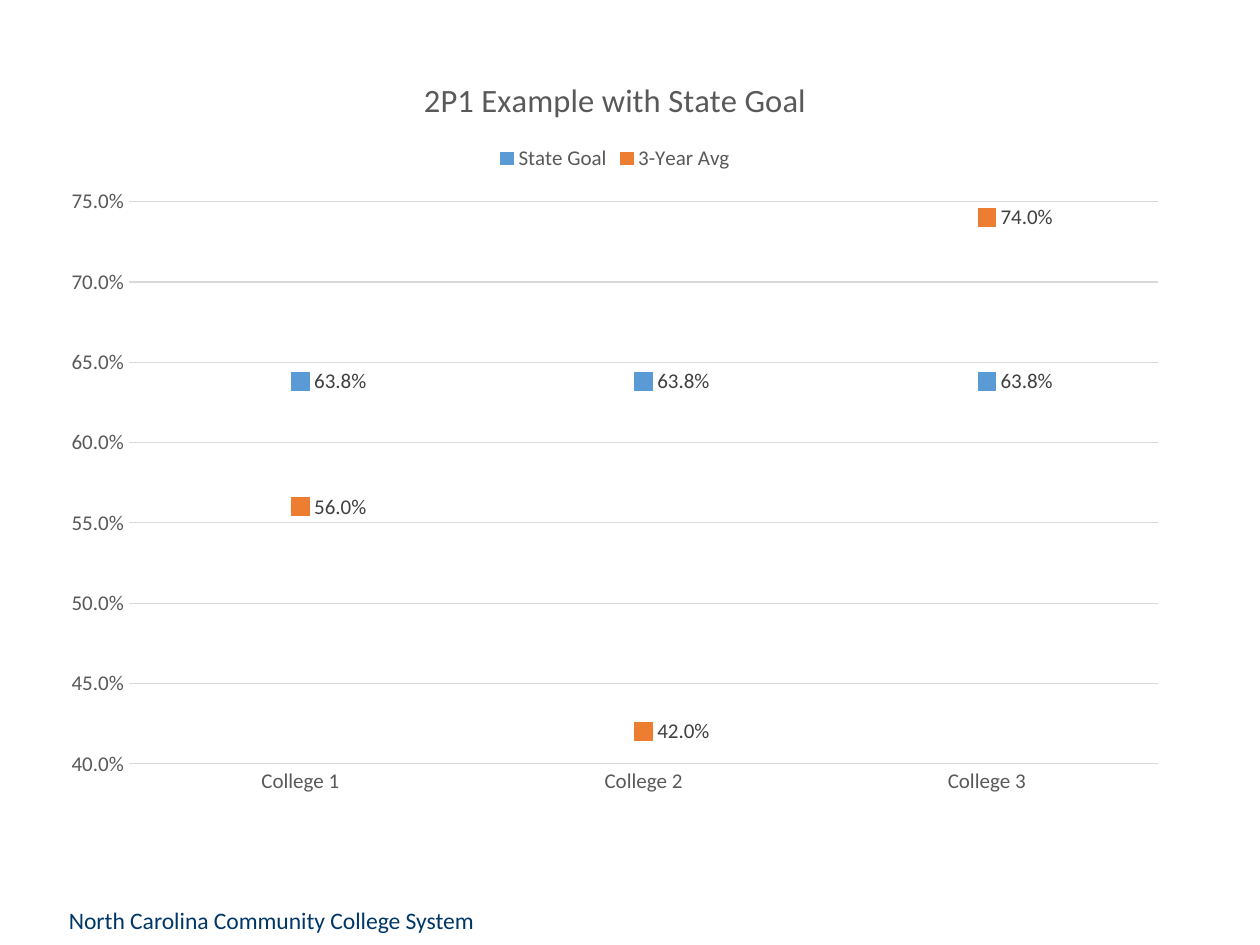
from typing import Any, NamedTuple

from lxml.etree import SubElement
from pptx import Presentation
from pptx.chart.data import CategoryChartData
from pptx.dml.color import RGBColor
from pptx.enum.chart import (XL_CHART_TYPE, XL_LABEL_POSITION,
                             XL_LEGEND_POSITION, XL_MARKER_STYLE, XL_TICK_MARK)
from pptx.enum.text import MSO_ANCHOR
from pptx.oxml.ns import qn
from pptx.util import Cm, Pt


class Score(NamedTuple):
    """One marker series of the chart."""
    name: str
    vals: tuple[float, ...]
    tint: str


SCORES = (
    Score("State Goal", (0.638, 0.638, 0.638), "5B9BD5"),
    Score("3-Year Avg", (0.56, 0.42, 0.74), "ED7D31"),
)
GREY, RULE, DARK, NAVY = "595959", "D9D9D9", "404040", "003767"
PERCENT = "0.0%"
PLOT = {"x": 0.07, "y": 0.2, "w": 0.91, "h": 0.74}


def paint(part: Any, tint: str) -> None:
    """Give a font or a fill a solid colour."""
    if hasattr(part, "solid"):
        part.solid()
        part.fore_color.rgb = RGBColor.from_string(tint)
    else:
        part.color.rgb = RGBColor.from_string(tint)


def assign(part: Any, form: dict[str, Any]) -> None:
    """Set each named attribute of a part."""
    for key, val in form.items():
        setattr(part, key, val)


def style(font: Any, size: float, tint: str) -> None:
    """Set face, size, weight and colour of a font."""
    assign(font, {"name": "Calibri", "size": Pt(size), "bold": False})
    paint(font, tint)


def rule(line: Any) -> None:
    """Draw a thin pale line."""
    line.width = Pt(0.75)
    paint(line.fill, RULE)


def place(chart: Any) -> None:
    """Fix the inner plot area as shares of the chart."""
    area = chart._chartSpace.chart.plotArea
    for old in area.findall(qn("c:layout")):
        area.remove(old)
    frame = area.makeelement(qn("c:layout"), {})
    area.insert(0, frame)
    manual = SubElement(frame, qn("c:manualLayout"))
    modes = {"layoutTarget": "inner", "xMode": "edge", "yMode": "edge"}
    for key, val in {**modes, **PLOT}.items():
        SubElement(manual, qn(f"c:{key}")).set("val", str(val))


def mark(line: Any, score: Score) -> None:
    """Show a series as square markers with labels and no line."""
    line.smooth = False
    line.format.line.fill.background()
    assign(line.marker, {"style": XL_MARKER_STYLE.SQUARE, "size": 10})
    paint(line.marker.format.fill, score.tint)
    paint(line.marker.format.line.fill, score.tint)
    tags = line.data_labels
    assign(tags, {"show_value": True, "number_format": PERCENT,
                  "number_format_is_linked": False,
                  "position": XL_LABEL_POSITION.RIGHT})
    style(tags.font, 12, DARK)


def draw(slide: Any) -> None:
    """Add the chart of scores by college."""
    data = CategoryChartData(number_format=PERCENT)
    data.categories = [f"College {num}" for num in range(1, 4)]
    for score in SCORES:
        data.add_series(score.name, score.vals)
    chart = slide.shapes.add_chart(XL_CHART_TYPE.LINE_MARKERS, Cm(1), Cm(1),
                                   Cm(22.81), Cm(15.32), data).chart
    style(chart.font, 10, "000000")
    chart.has_title = True
    chart.chart_title.include_in_layout = False
    title = chart.chart_title.text_frame
    title.text = "2P1 Example with State Goal"
    style(title.paragraphs[0].runs[0].font, 18.6, GREY)
    chart.has_legend = True
    assign(chart.legend, {"position": XL_LEGEND_POSITION.TOP,
                          "include_in_layout": False})
    style(chart.legend.font, 12, GREY)
    ticks = {"major_tick_mark": XL_TICK_MARK.NONE,
             "minor_tick_mark": XL_TICK_MARK.NONE}
    for axis in (chart.category_axis, chart.value_axis):
        assign(axis, ticks)
        style(axis.tick_labels.font, 12, GREY)
    rule(chart.category_axis.format.line)
    scale = chart.value_axis
    assign(scale, {"minimum_scale": 0.4, "maximum_scale": 0.75,
                   "major_unit": 0.05, "has_major_gridlines": True})
    assign(scale.tick_labels, {"number_format": PERCENT,
                               "number_format_is_linked": False})
    scale.format.line.fill.background()
    rule(scale.major_gridlines.format.line)
    chart.plots[0].vary_by_categories = False
    for line, score in zip(chart.plots[0].series, SCORES):
        mark(line, score)
    place(chart)


def sign(slide: Any) -> None:
    """Add the name at the foot of the slide."""
    frame = slide.shapes.add_textbox(Cm(1.14), Cm(18.03), Cm(9.02),
                                     Cm(1.02)).text_frame
    assign(frame, {"word_wrap": True, "vertical_anchor": MSO_ANCHOR.MIDDLE})
    frame.text = "North Carolina Community College System"
    style(frame.paragraphs[0].runs[0].font, 13.5, NAVY)


def main() -> None:
    """Build and save the slide."""
    deck = Presentation()
    assign(deck, {"slide_width": Cm(25.4), "slide_height": Cm(19.05)})
    slide = deck.slides.add_slide(deck.slide_layouts[6])
    paint(slide.background.fill, "FFFFFF")
    sign(slide)
    draw(slide)
    deck.save("out.pptx")


if __name__ == "__main__":
    main()
